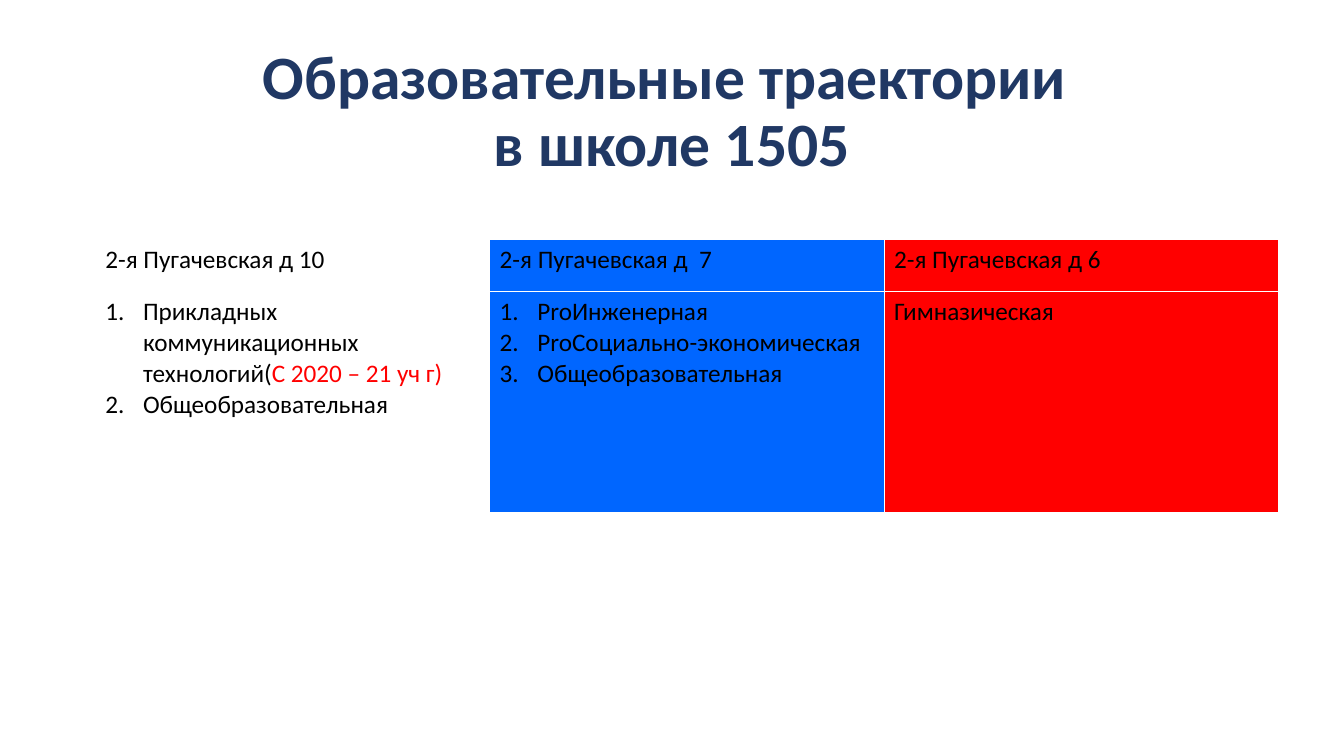
from lxml import etree
from pptx import Presentation
from pptx.dml.color import RGBColor
from pptx.enum.text import MSO_ANCHOR, PP_ALIGN
from pptx.oxml.ns import qn
from pptx.util import Cm, Pt

MIDDLE = MSO_ANCHOR.MIDDLE
CENTER = PP_ALIGN.CENTER
NAVY = RGBColor(0x20, 0x38, 0x64)
BLACK = RGBColor(0, 0, 0)
WHITE = RGBColor(0xFF, 0xFF, 0xFF)
BLUE = RGBColor(0x00, 0x66, 0xFF)
RED = RGBColor(0xFF, 0, 0)

TITLE = "Образовательные траектории \vв школе 1505"
TRACKS = [
    ("2-я Пугачевская д 10", WHITE, [
        [("Прикладных коммуникационных технологий(", BLACK),
         ("C 2020 – 21 уч г)", RED)],
        [("Общеобразовательная", BLACK)],
    ]),
    ("2-я Пугачевская д  7", BLUE, [
        [("ProИнженерная", BLACK)],
        [("ProСоциально-экономическая", BLACK)],
        [("Общеобразовательная", BLACK)],
    ]),
    ("2-я Пугачевская д 6", RED, [[("Гимназическая", BLACK)]]),
]


class Deck:
    font = "Calibri"

    def __init__(self):
        self.show = Presentation()
        self.show.slide_width = Cm(33.87)
        self.show.slide_height = Cm(19.05)
        self.slide = self.show.slides.add_slide(self.show.slide_layouts[6])

    def style(self, run, size, color, bold=False):
        run.font.name = self.font
        run.font.size = Pt(size)
        run.font.bold = bold
        run.font.color.rgb = color

    def title(self, text, left, top, width, height):
        box = self.slide.shapes.add_textbox(Cm(left), Cm(top), Cm(width), Cm(height))
        frame = box.text_frame
        frame.word_wrap = True
        frame.vertical_anchor = MIDDLE
        frame.text = text
        para = frame.paragraphs[0]
        para.alignment = CENTER
        para.line_spacing = 0.9
        for run in para.runs:
            self.style(run, 44, NAVY, True)

    def number(self, para):
        props = para._p.get_or_add_pPr()
        props.set("marL", str(Cm(0.95)))
        props.set("indent", str(-Cm(0.95)))
        etree.SubElement(props, qn("a:buFont"), typeface="+mj-lt")
        etree.SubElement(props, qn("a:buAutoNum"), type="arabicPeriod")

    def border(self, cell):
        props = cell._tc.get_or_add_tcPr()
        for side in ("lnL", "lnR", "lnT", "lnB"):
            line = etree.SubElement(props, qn(f"a:{side}"), w=str(Pt(1)))
            fill = etree.SubElement(line, qn("a:solidFill"))
            etree.SubElement(fill, qn("a:srgbClr"), val=str(WHITE))

    def cell(self, cell, lines, color):
        self.border(cell)
        cell.fill.solid()
        cell.fill.fore_color.rgb = color
        frame = cell.text_frame
        for i, line in enumerate(lines):
            para = frame.add_paragraph() if i else frame.paragraphs[0]
            if len(lines) > 1:
                self.number(para)
            for text, ink in line:
                run = para.add_run()
                run.text = text
                self.style(run, 18, ink)

    def table(self, tracks, left, top, width, rows):
        frame = self.slide.shapes.add_table(
            len(rows), len(tracks), Cm(left), Cm(top), Cm(width), Cm(sum(rows)))
        grid = frame.table
        grid.first_row = False
        grid.horz_banding = False
        for row, height in zip(grid.rows, rows):
            row.height = Cm(height)
        for col, (place, color, lines) in enumerate(tracks):
            self.cell(grid.cell(0, col), [[(place, BLACK)]], color)
            self.cell(grid.cell(1, col), lines, color)


def main():
    deck = Deck()
    deck.title(TITLE, 2.33, 1.01, 29.21, 3.68)
    deck.table(TRACKS, 2.4, 6.03, 29.82, [1.32, 5.56])
    deck.show.save("out.pptx")


if __name__ == "__main__":
    main()
